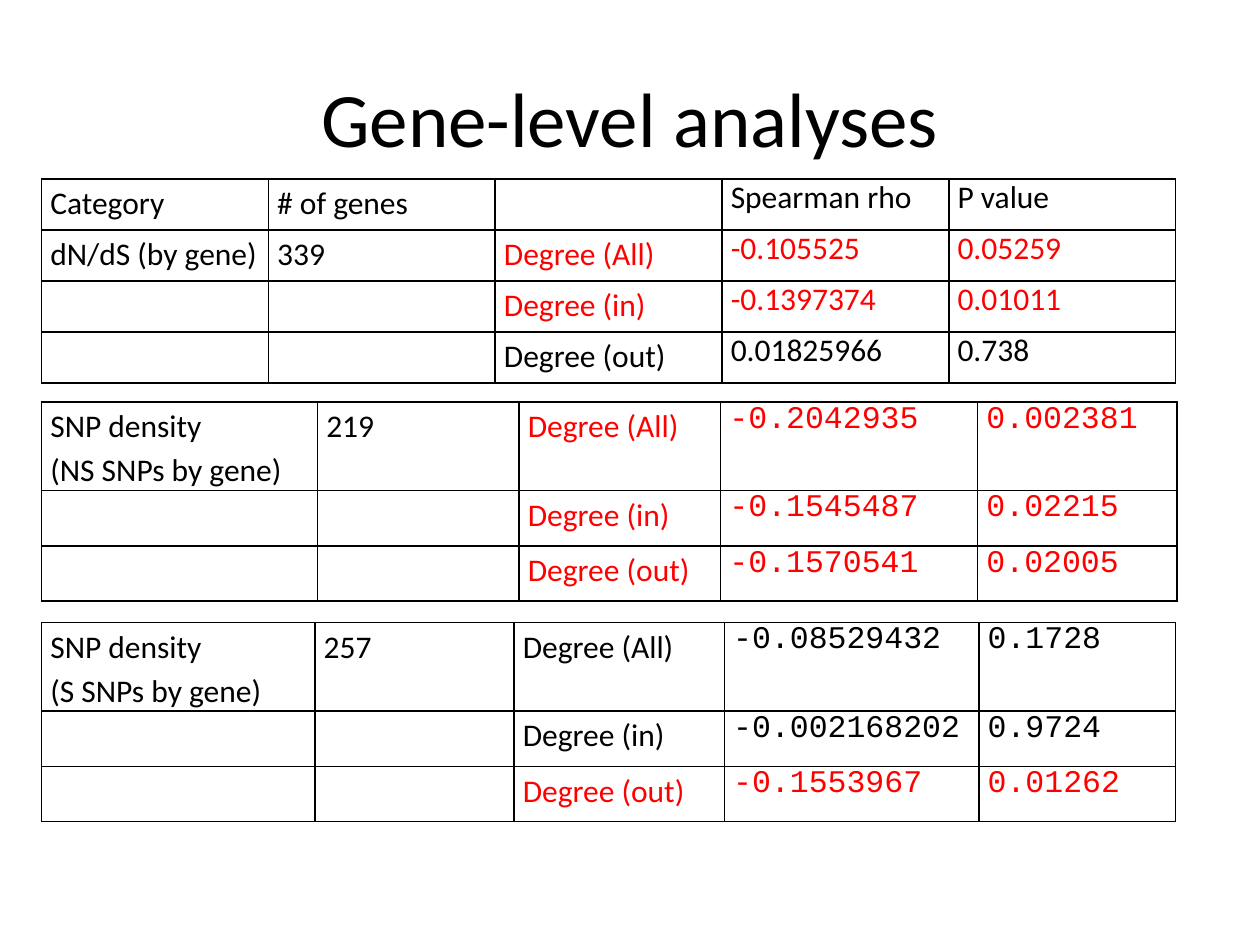
from lxml import etree
from pptx import Presentation
from pptx.dml.color import RGBColor
from pptx.enum.text import MSO_ANCHOR, PP_ALIGN
from pptx.oxml.ns import qn
from pptx.util import Inches, Pt

TOP, MIDDLE = MSO_ANCHOR.TOP, MSO_ANCHOR.MIDDLE
CENTER = PP_ALIGN.CENTER
BLACK = RGBColor(0x00, 0x00, 0x00)
RED = RGBColor(0xFF, 0x00, 0x00)
BODY_FONT, NUMBER_FONT = "Calibri", "Courier New"
RED_BELOW = 0.1  # results with a smaller P value are shown in red
FIRST_RESULT_COLUMN, FIRST_NUMBER_COLUMN = 2, 3

HEADER = ["Category", "# of genes", "", "Spearman rho", "P value"]

# top, column widths, row heights, font of the numbers, rows
TABLES = [
    (1.42, [1.8] * 5, [0.405] * 4, BODY_FONT, [
        HEADER,
        ["dN/dS (by gene)", "339", "Degree (All)", "-0.105525", "0.05259"],
        ["", "", "Degree (in)", "-0.1397374", "0.01011"],
        ["", "", "Degree (out)", "0.01825966", "0.738"],
    ]),
    (3.19, [2.19, 1.6, 1.6, 2.04, 1.58], [0.7, 0.44, 0.44], NUMBER_FONT, [
        ["SNP density\n(NS SNPs by gene)", "219", "Degree (All)", "-0.2042935", "0.002381"],
        ["", "", "Degree (in)", "-0.1545487", "0.02215"],
        ["", "", "Degree (out)", "-0.1570541", "0.02005"],
    ]),
    (4.94, [2.17, 1.58, 1.67, 2.02, 1.56], [0.7, 0.44, 0.44], NUMBER_FONT, [
        ["SNP density\n(S SNPs by gene)", "257", "Degree (All)", "-0.08529432", "0.1728"],
        ["", "", "Degree (in)", "-0.002168202", "0.9724"],
        ["", "", "Degree (out)", "-0.1553967", "0.01262"],
    ]),
]


def add_borders(cell):
    properties = cell._tc.get_or_add_tcPr()
    for side in ("a:lnL", "a:lnR", "a:lnT", "a:lnB"):
        line = etree.SubElement(properties, qn(side), w=str(Pt(1)))
        fill = etree.SubElement(line, qn("a:solidFill"))
        etree.SubElement(fill, qn("a:srgbClr"), val=str(BLACK))


def format_text(text_frame, font_name, size, color):
    for paragraph in text_frame.paragraphs:
        for run in paragraph.runs:
            run.font.name = font_name
            run.font.size = Pt(size)
            run.font.color.rgb = color


prs = Presentation()
prs.slide_width, prs.slide_height = Inches(10), Inches(7.5)
slide = prs.slides.add_slide(prs.slide_layouts[5])

title = slide.shapes.title
title.left, title.top = Inches(0.5), Inches(0.3)
title.width, title.height = Inches(9), Inches(1.25)
title.text_frame.text = "Gene-level analyses"
title.text_frame.vertical_anchor = MIDDLE
title.text_frame.paragraphs[0].alignment = CENTER
format_text(title.text_frame, BODY_FONT, 44, BLACK)

for top, widths, heights, number_font, rows in TABLES:
    table = slide.shapes.add_table(
        len(rows), len(widths), Inches(0.33), Inches(top),
        Inches(sum(widths)), Inches(sum(heights))).table
    table.first_row = False
    table.horz_banding = False
    for column, width in zip(table.columns, widths):
        column.width = Inches(width)

    for r, values in enumerate(rows):
        table.rows[r].height = Inches(heights[r])
        is_red = values is not HEADER and float(values[-1]) < RED_BELOW
        for c, value in enumerate(values):
            cell = table.cell(r, c)
            add_borders(cell)
            cell.fill.background()
            cell.margin_left = cell.margin_right = Inches(0.07)
            cell.margin_top = cell.margin_bottom = 0
            cell.vertical_anchor = TOP
            cell.text_frame.text = value
            is_number = c >= FIRST_NUMBER_COLUMN
            if not is_number:
                for paragraph in cell.text_frame.paragraphs:
                    paragraph.line_spacing = 1.15
            format_text(cell.text_frame, number_font if is_number else BODY_FONT, 18,
                        RED if is_red and c >= FIRST_RESULT_COLUMN else BLACK)

prs.save("out.pptx")
